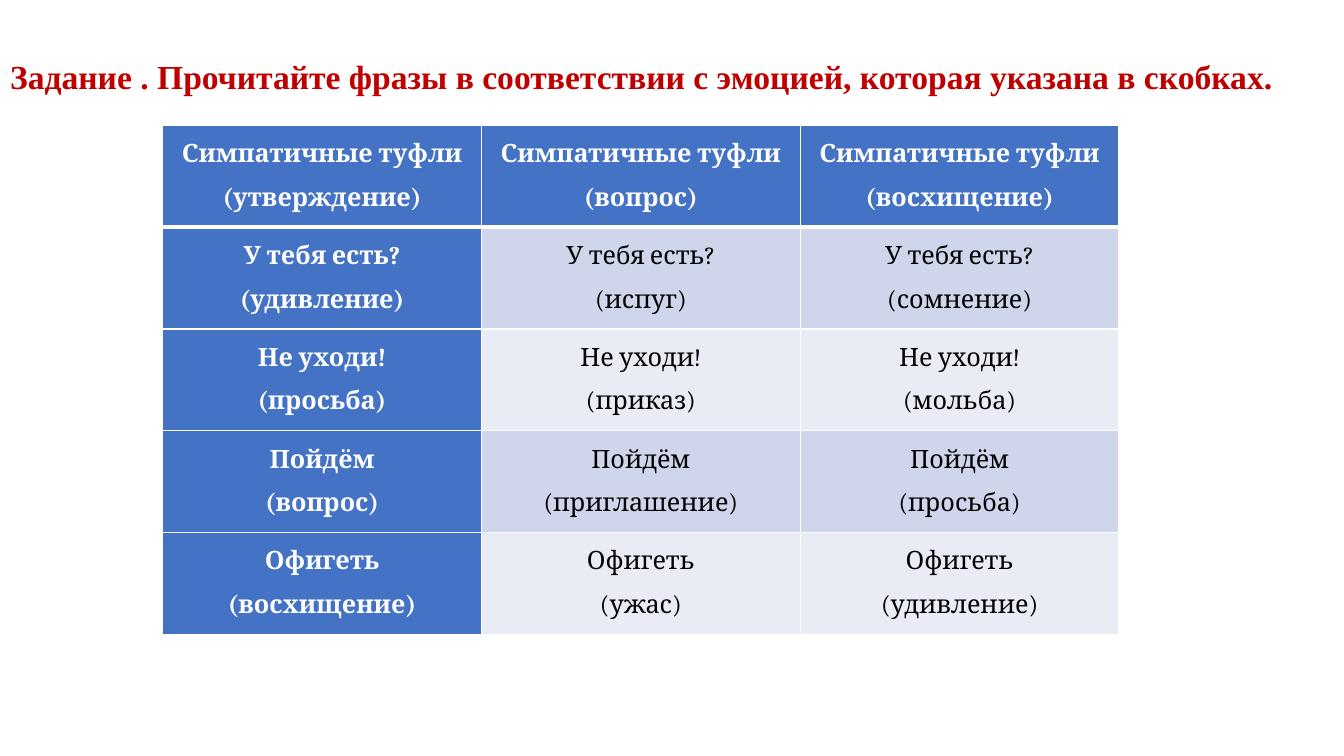
from lxml import etree
from pptx import Presentation
from pptx import util as u
from pptx.dml.color import RGBColor
from pptx.enum import text
from pptx.oxml import ns

COLORS = {
    "title": "C00000",
    "header": "4472C4",
    "odd_row": "CFD5EA",
    "even_row": "E9EBF5",
    "white": "FFFFFF",
    "black": "000000",
}

PHRASES = [
    ("Симпатичные туфли", ["утверждение", "вопрос", "восхищение"]),
    ("У тебя есть?", ["удивление", "испуг", "сомнение"]),
    ("Не уходи!", ["просьба", "приказ", "мольба"]),
    ("Пойдём", ["вопрос", "приглашение", "просьба"]),
    ("Офигеть", ["восхищение", "ужас", "удивление"]),
]


def write_text(frame, lines, *, font, size, color, bold, align, spacing=1.0):
    for index, line in enumerate(lines):
        paragraph = frame.paragraphs[0] if index == 0 else frame.add_paragraph()
        paragraph.alignment = align
        paragraph.line_spacing = spacing
        paragraph.space_before = paragraph.space_after = u.Pt(0)
        run = paragraph.add_run()
        run.text = line
        run.font.name = font
        run.font.size = u.Pt(size)
        run.font.bold = bold
        run.font.color.rgb = RGBColor.from_string(COLORS[color])


def set_borders(cell, widths):
    properties = cell._tc.get_or_add_tcPr()
    for index, (side, width) in enumerate(widths.items()):
        line = etree.Element(ns.qn(f"a:ln{side}"), w=str(u.Pt(width)))
        fill = etree.SubElement(line, ns.qn("a:solidFill"))
        etree.SubElement(fill, ns.qn("a:srgbClr"), val=COLORS["white"])
        properties.insert(index, line)


presentation = Presentation()
presentation.slide_width = u.Cm(33.87)
presentation.slide_height = u.Cm(19.05)
slide = presentation.slides.add_slide(presentation.slide_layouts[5])

# Title
title = slide.shapes.title
title.left, title.top = u.Cm(0), u.Cm(1.27)
title.width, title.height = u.Cm(33.87), u.Cm(1.28)
title_frame = title.text_frame
title_frame.word_wrap = True
title_frame.auto_size = text.MSO_AUTO_SIZE.NONE
title_frame.vertical_anchor = text.MSO_ANCHOR.TOP
write_text(
    title_frame,
    ["Задание . Прочитайте фразы в соответствии с эмоцией, которая указана в скобках."],
    font="Times New Roman", size=24, color="title", bold=True,
    align=text.PP_ALIGN.JUSTIFY,
)

# Table of phrases and emotions
row_count, column_count = len(PHRASES), len(PHRASES[0][1])
table = slide.shapes.add_table(
    row_count, column_count, u.Cm(4.1), u.Cm(3.16), u.Cm(24.1), u.Cm(12.83)
).table

for row, (phrase, emotions) in enumerate(PHRASES):
    for column, emotion in enumerate(emotions):
        cell = table.cell(row, column)
        is_header = row == 0 or column == 0
        band = "odd_row" if row % 2 else "even_row"
        cell.fill.solid()
        cell.fill.fore_color.rgb = RGBColor.from_string(
            COLORS["header" if is_header else band]
        )
        cell.margin_left = cell.margin_right = u.Cm(0.18)
        cell.margin_top = cell.margin_bottom = u.Cm(0)
        write_text(
            cell.text_frame, [phrase, f"({emotion})"],
            font="Cambria", size=18, color="white" if is_header else "black",
            bold=is_header, align=text.PP_ALIGN.CENTER, spacing=1.5,
        )
        # The line under the header row is thicker
        set_borders(cell, {
            "L": 1, "R": 1, "T": 3 if row == 1 else 1, "B": 3 if row == 0 else 1,
        })

presentation.save("out.pptx")
